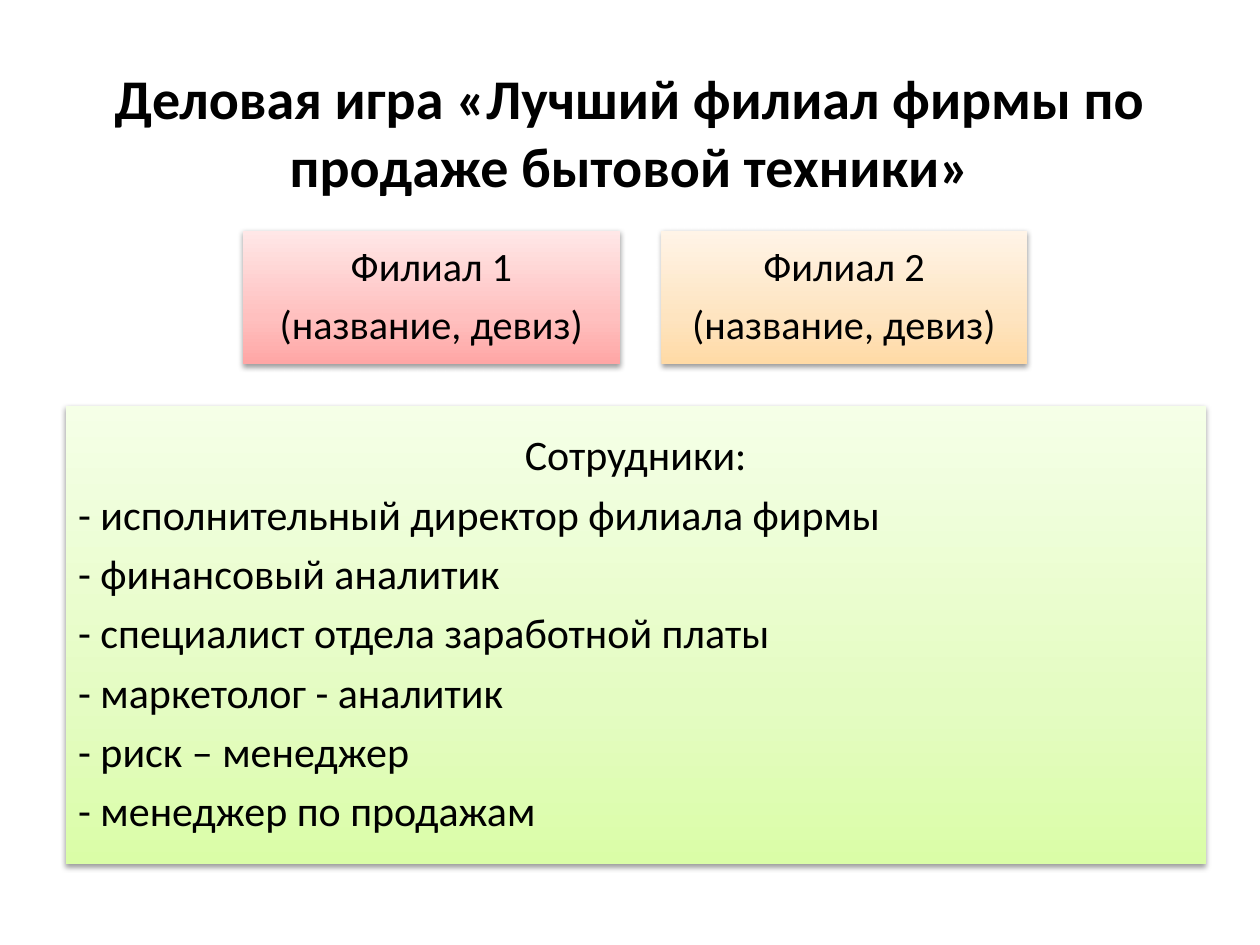
from lxml import etree
from pptx import Presentation
from pptx.dml.color import RGBColor
from pptx.enum.shapes import MSO_SHAPE
from pptx.enum.text import MSO_ANCHOR, MSO_AUTO_SIZE, PP_ALIGN
from pptx.oxml import parse_xml
from pptx.oxml.ns import nsdecls, qn
from pptx.util import Inches, Pt

CENTER, LEFT = PP_ALIGN.CENTER, PP_ALIGN.LEFT
MIDDLE = MSO_ANCHOR.MIDDLE
NO_AUTOFIT = MSO_AUTO_SIZE.NONE
RECTANGLE = MSO_SHAPE.RECTANGLE
FONT = "Calibri"


def write(para, text, size, align, bold=False):
    para.alignment = align
    span = para.add_run()
    span.text = text
    span.font.name, span.font.size, span.font.bold = FONT, Pt(size), bold
    span.font.color.rgb = RGBColor.from_string("000000")


def fill_panel(box, colors, lines, size, first_align, rest_align):
    """Give a box its upward gradient, soft shadow and text lines."""
    box.fill.gradient()
    box.fill.gradient_angle = 90
    stops = box._element.spPr.find(".//" + qn("a:gsLst"))
    stops.clear()
    for position, color in zip((0, 35, 100), colors):
        stop = etree.SubElement(stops, qn("a:gs"), pos=str(position * 1000))
        etree.SubElement(stop, qn("a:srgbClr"), val=color)
    box.line.fill.background()
    box.shadow.inherit = False
    box._element.spPr.find(qn("a:effectLst")).append(parse_xml(
        f'<a:outerShdw {nsdecls("a")} blurRad="{Pt(3.1)}" dist="{Pt(1.6)}" '
        'dir="5400000" rotWithShape="0"><a:srgbClr val="000000">'
        '<a:alpha val="38000"/></a:srgbClr></a:outerShdw>'))

    frame = box.text_frame
    frame.word_wrap, frame.auto_size = True, NO_AUTOFIT
    frame.vertical_anchor = MIDDLE
    frame.margin_left = frame.margin_right = Inches(0.1)
    frame.margin_top = frame.margin_bottom = Inches(0.1)
    for index, line in enumerate(lines):
        para = frame.add_paragraph() if index else frame.paragraphs[0]
        para.line_spacing = 0.9
        para.space_before, para.space_after = Pt(0), Pt(round(size * 0.35))
        # The dashes are typed, so the list bullet and indent are off
        properties = para._p.get_or_add_pPr()
        properties.set("marL", "0")
        properties.set("indent", "0")
        etree.SubElement(properties, qn("a:buNone"))
        write(para, line, size, rest_align if index else first_align)


deck = Presentation()
deck.slide_width, deck.slide_height = Inches(10), Inches(7.5)
page = deck.slides.add_slide(deck.slide_layouts[1])

# Title, lifted by one text line inside its box
title = page.shapes.title
title.left, title.top = Inches(0.5), Inches(0.52)
title.width, title.height = Inches(9), Inches(1.57)
title.text_frame.auto_size = NO_AUTOFIT
title.text_frame.vertical_anchor = MIDDLE
title.text_frame.margin_bottom = Inches(0.58)
write(title.text_frame.paragraphs[0],
      "Деловая игра «Лучший филиал фирмы по продаже бытовой техники»",
      32, CENTER, bold=True)

# Two branches side by side
branches = [
    ("Филиал 1", 1.93, 2.99, ("FFA6A5", "FFC0BF", "FFE7E7")),
    ("Филиал 2", 5.25, 2.9, ("FFDAA5", "FEE4C0", "FFF4E7")),
]
for name, left, width, colors in branches:
    branch = page.shapes.add_shape(RECTANGLE, Inches(left), Inches(1.83),
                                   Inches(width), Inches(1.06))
    fill_panel(branch, colors, (name, "(название, девиз)"), 23, CENTER, CENTER)

# Staff list
staff = page.placeholders[1]
staff.left, staff.top = Inches(0.52), Inches(3.22)
staff.width, staff.height = Inches(9.05), Inches(3.64)
roles = [
    "Сотрудники:",
    "- исполнительный директор филиала фирмы",
    "- финансовый аналитик",
    "- специалист отдела заработной платы",
    "- маркетолог - аналитик",
    "- риск – менеджер",
    "- менеджер по продажам",
]
fill_panel(staff, ("DAFDA7", "E4FCC2", "F5FFE7"), roles, 24, CENTER, LEFT)

deck.save("out.pptx")
